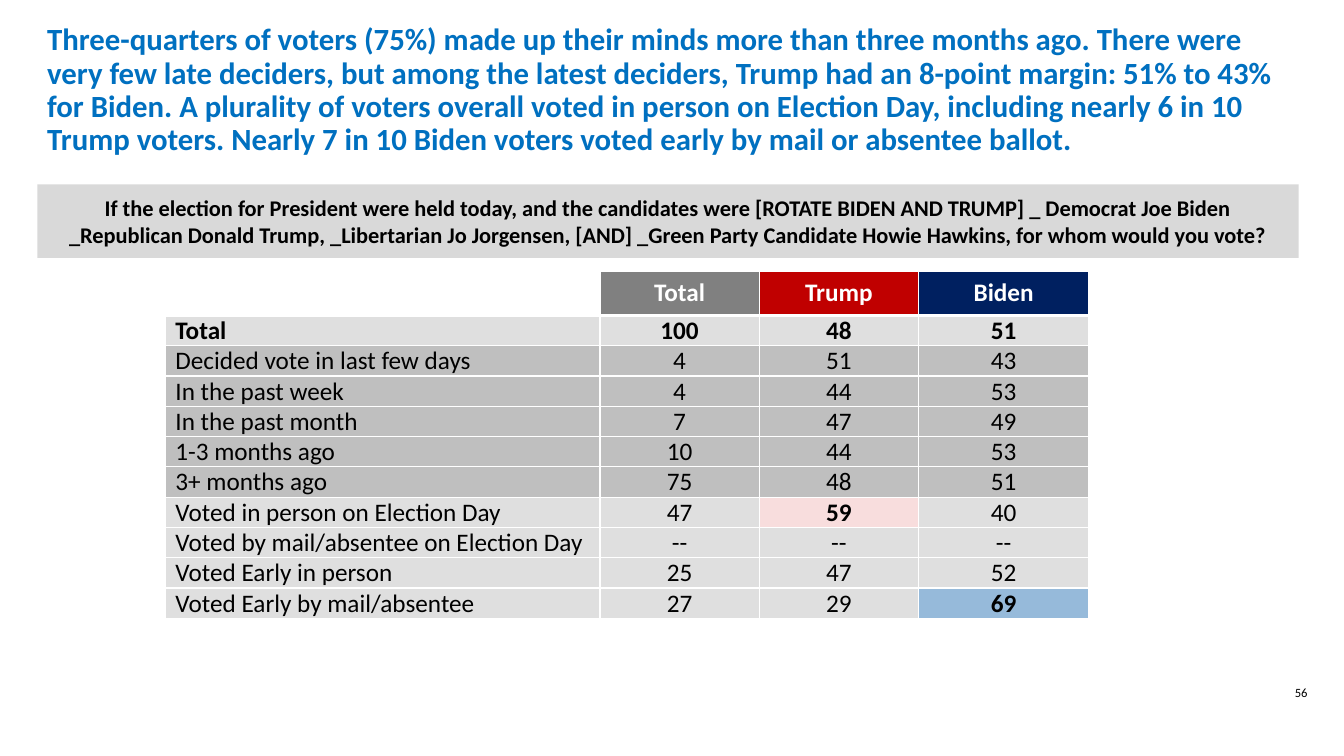
from dataclasses import dataclass, field
from typing import Any

from pptx import Presentation
from pptx.dml.color import RGBColor
from pptx.enum.shapes import MSO_SHAPE
from pptx.enum.text import MSO_ANCHOR, PP_ALIGN
from pptx.oxml.ns import qn
from pptx.oxml.xmlchemy import OxmlElement
from pptx.util import Inches, Pt

COLORS = {
    "white": "FFFFFF", "black": "000000", "title": "0070C0", "band": "D9D9D9",
    "total": "808080", "trump": "C00000", "biden": "002060",
    "light": "DFDFDF", "dark": "BFBFBF", "pink": "F8DDDD", "blue": "96BADA",
}


@dataclass
class Style:
    size: float
    bold: bool = False
    color: str = "black"
    align: Any = PP_ALIGN.CENTER
    spacing: float = 1.0


@dataclass
class Panel:
    text: str
    box: tuple[float, float, float, float]
    style: Style
    fill: str = ""
    anchor: Any = MSO_ANCHOR.MIDDLE


@dataclass
class Row:
    label: str
    values: tuple[str, str, str]
    fill: str = "light"
    bold: bool = False
    marks: dict[int, str] = field(default_factory=dict)


PANELS = [
    Panel("56", (12.53, 6.75, 0.75, 0.33), Style(9), anchor=MSO_ANCHOR.TOP),
    Panel(
        "Three-quarters of voters (75%) made up their minds more than three months ago. "
        "There were very few late deciders, but among the latest deciders, Trump had an "
        "8-point margin: 51% to 43% for Biden. A plurality of voters overall voted in "
        "person on Election Day, including nearly 6 in 10 Trump voters. Nearly 7 in 10 "
        "Biden voters voted early by mail or absentee ballot.",
        (0.37, 0.35, 12.51, 1.1), Style(22, True, "title", PP_ALIGN.LEFT, 0.9),
    ),
    Panel(
        "If the election for President were held today, and the candidates were "
        "[ROTATE BIDEN AND TRUMP] _ Democrat Joe Biden _Republican Donald Trump, "
        "_Libertarian Jo Jorgensen, [AND] _Green Party Candidate Howie Hawkins, "
        "for whom would you vote?",
        (0.37, 1.83, 12.51, 0.73), Style(16, True), "band",
    ),
]
HEADS = [("", "white"), ("Total", "total"), ("Trump", "trump"), ("Biden", "biden")]
ROWS = [
    Row("Total", ("100", "48", "51"), bold=True),
    Row("Decided vote in last few days", ("4", "51", "43"), "dark"),
    Row("In the past week", ("4", "44", "53"), "dark"),
    Row("In the past month", ("7", "47", "49"), "dark"),
    Row("1-3 months ago", ("10", "44", "53"), "dark"),
    Row("3+ months ago", ("75", "48", "51"), "dark"),
    Row("Voted in person on Election Day", ("47", "59", "40"), marks={2: "pink"}),
    Row("Voted by mail/absentee on Election Day", ("--", "--", "--")),
    Row("Voted Early in person", ("25", "47", "52")),
    Row("Voted Early by mail/absentee", ("27", "29", "69"), marks={3: "blue"}),
]
WIDTHS = (4.31, 1.58, 1.58, 1.69)
HEAD, STEP = 0.44, 0.3


def paint(fill: Any, color: str) -> None:
    fill.solid()
    fill.fore_color.rgb = RGBColor.from_string(COLORS[color])


def write(frame: Any, text: str, style: Style) -> None:
    para = frame.paragraphs[0]
    para.text = text
    para.alignment = style.align
    para.line_spacing = style.spacing
    form = {"name": "Calibri", "size": Pt(style.size), "bold": style.bold}
    for key, value in form.items():
        setattr(para.font, key, value)
    para.font.color.rgb = RGBColor.from_string(COLORS[style.color])


def draw(shapes: Any, panel: Panel) -> None:
    box = [Inches(side) for side in panel.box]
    if panel.fill:
        shape = shapes.add_shape(MSO_SHAPE.RECTANGLE, *box)
        shape.shadow.inherit = False
        paint(shape.fill, panel.fill)
        shape.line.fill.background()
    else:
        shape = shapes.add_textbox(*box)
    frame = shape.text_frame
    frame.word_wrap = True
    frame.vertical_anchor = panel.anchor
    write(frame, panel.text, panel.style)


def edge(cell: Any, widths: dict[str, float]) -> None:
    props = cell._tc.get_or_add_tcPr()
    for spot, (side, width) in enumerate(widths.items()):
        line = OxmlElement(f"a:ln{side}")
        line.set("w", str(Pt(width)))
        fill = OxmlElement("a:solidFill")
        color = OxmlElement("a:srgbClr")
        color.set("val", COLORS["white"])
        fill.append(color)
        line.append(fill)
        props.insert(spot, line)


def fill_cell(cell: Any, text: str, fill: str, style: Style, row: int) -> None:
    form = {"vertical_anchor": MSO_ANCHOR.MIDDLE}
    if row:
        form |= {"margin_top": 0, "margin_bottom": 0}
    for key, value in form.items():
        setattr(cell, key, value)
    write(cell.text_frame, text, style)
    paint(cell.fill, fill)
    edge(cell, {"L": 1, "R": 1, "T": 3 if row == 1 else 1, "B": 1 if row else 3})


def draw_table(shapes: Any) -> None:
    frame = shapes.add_table(
        len(ROWS) + 1, len(WIDTHS), Inches(1.64), Inches(2.69),
        Inches(sum(WIDTHS)), Inches(HEAD + STEP * len(ROWS)),
    )
    table = frame.table
    table.first_row = table.horz_banding = False
    for col, width in zip(table.columns, WIDTHS):
        col.width = Inches(width)
    for num, line in enumerate(table.rows):
        line.height = Inches(STEP if num else HEAD)
    for col, (text, fill) in enumerate(HEADS):
        fill_cell(table.cell(0, col), text, fill, Style(18, True, "white"), 0)
    for num, row in enumerate(ROWS, 1):
        for col, text in enumerate((row.label, *row.values)):
            style = Style(
                18, row.bold or col in row.marks,
                align=PP_ALIGN.CENTER if col else PP_ALIGN.LEFT,
            )
            fill_cell(table.cell(num, col), text, row.marks.get(col, row.fill), style, num)


def main() -> None:
    deck = Presentation()
    deck.slide_width, deck.slide_height = Inches(13.33), Inches(7.5)
    slide = deck.slides.add_slide(deck.slide_layouts[6])
    for panel in PANELS:
        draw(slide.shapes, panel)
    draw_table(slide.shapes)
    deck.save("out.pptx")


if __name__ == "__main__":
    main()
